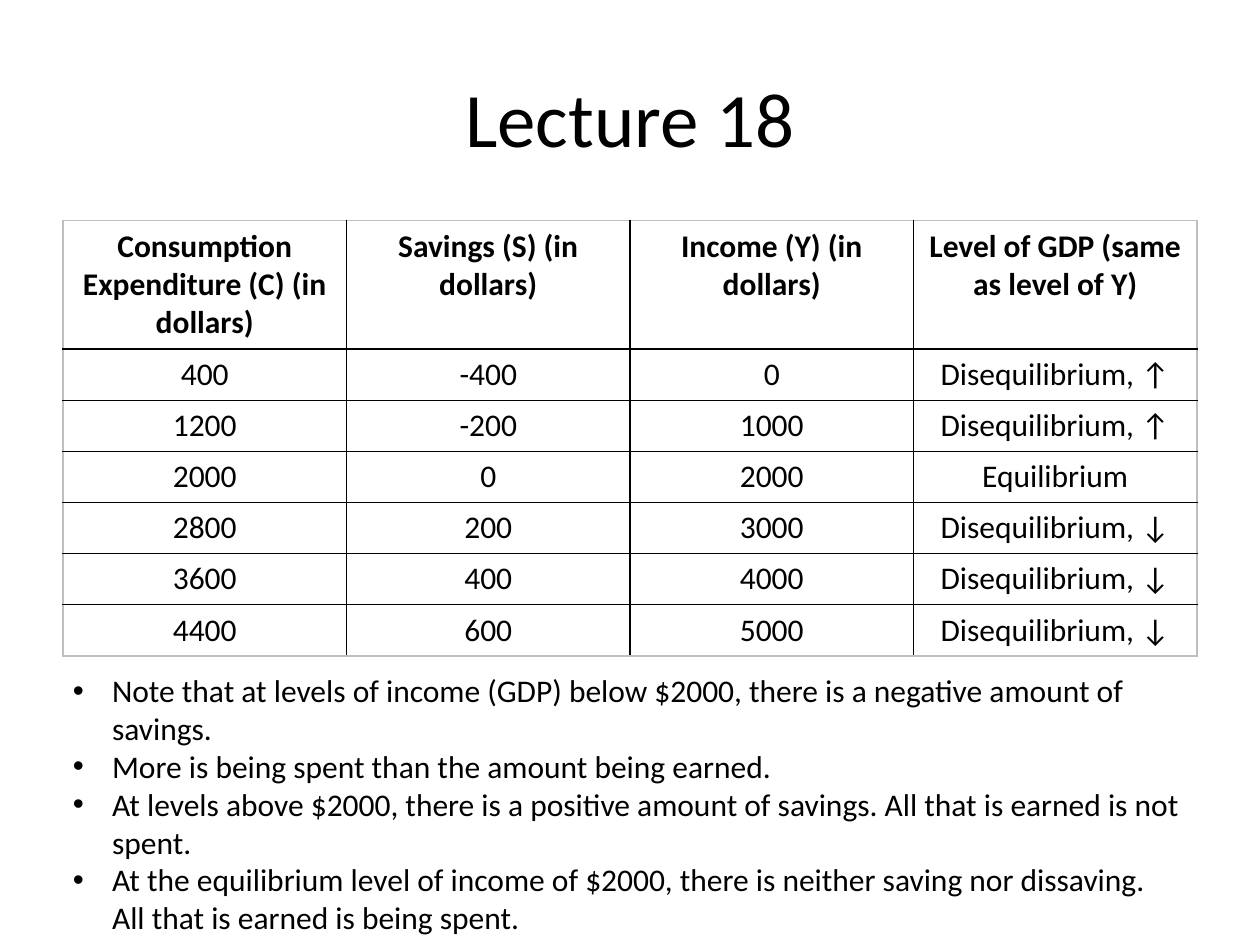
from pptx import Presentation
from pptx.dml.color import RGBColor as Rgb
from pptx.enum.text import MSO_ANCHOR as Anchor, MSO_AUTO_SIZE as Auto, PP_ALIGN as Align
from pptx.oxml.ns import qn
from pptx.util import Cm, Pt
from lxml.etree import SubElement as Sub

INK = "000000"
EDGE = "BFBFBF"
HEADS = [
    "Consumption Expenditure (C) (in dollars)",
    "Savings (S) (in dollars)",
    "Income (Y) (in dollars)",
    "Level of GDP (same as level of Y)",
]
ROWS = [
    ("400", "-400", "0", "Disequilibrium, ↑"),
    ("1200", "-200", "1000", "Disequilibrium, ↑"),
    ("2000", "0", "2000", "Equilibrium"),
    ("2800", "200", "3000", "Disequilibrium, ↓"),
    ("3600", "400", "4000", "Disequilibrium, ↓"),
    ("4400", "600", "5000", "Disequilibrium, ↓"),
]
NOTES = [
    "Note that at levels of income (GDP) below $2000, there is a negative amount of savings.",
    "More is being spent than the amount being earned.",
    "At levels above $2000, there is a positive amount of savings. All that is earned is not spent.",
    "At the equilibrium level of income of $2000, there is neither saving nor dissaving. "
    "All that is earned is being spent.",
]


def tint(code):
    return Rgb.from_string(code)


class Deck:
    def __init__(self, font, size):
        self.font, self.size = font, size
        self.file = Presentation()
        self.file.slide_width, self.file.slide_height = Cm(25.4), Cm(19.05)
        self.slide = self.file.slides.add_slide(self.file.slide_layouts[6])

    def add_text(self, para, text, size=None, bold=False):
        run = para.add_run()
        run.text = text
        run.font.name = self.font
        run.font.size = Pt(size or self.size)
        run.font.bold = bold
        run.font.color.rgb = tint(INK)

    def box(self, left, top, width, height):
        shape = self.slide.shapes.add_textbox(Cm(left), Cm(top), Cm(width), Cm(height))
        shape.text_frame.word_wrap = True
        return shape.text_frame

    def title(self, text, *place):
        frame = self.box(*place)
        frame.vertical_anchor = Anchor.MIDDLE
        para = frame.paragraphs[0]
        para.alignment = Align.CENTER
        self.add_text(para, text, 44)

    def bullets(self, items, *place):
        frame = self.box(*place)
        frame.auto_size = Auto.SHAPE_TO_FIT_TEXT
        for i, item in enumerate(items):
            para = frame.add_paragraph() if i else frame.paragraphs[0]
            props = para._p.get_or_add_pPr()
            props.set("marL", str(Cm(0.79)))
            props.set("indent", str(-Cm(0.79)))
            Sub(props, qn("a:buFont"), typeface="Arial")
            Sub(props, qn("a:buChar"), char="•")
            self.add_text(para, item)

    def rule(self, cell, side, code):
        line = Sub(cell._tc.get_or_add_tcPr(), qn(f"a:ln{side}"), w=str(Pt(1)))
        fill = Sub(line, qn("a:solidFill"))
        Sub(fill, qn("a:srgbClr"), val=code)

    def table(self, heads, rows, left, top, width, head, step):
        data = [heads, *rows]
        tall, wide = len(data), len(heads)
        high = head + step * len(rows)
        grid = self.slide.shapes.add_table(
            tall, wide, Cm(left), Cm(top), Cm(width), Cm(high)).table
        grid.horz_banding = False
        for r, row in enumerate(data):
            grid.rows[r].height = Cm(step if r else head)
            for c, text in enumerate(row):
                cell = grid.cell(r, c)
                outer = {"L": c == 0, "R": c == wide - 1, "T": r == 0, "B": r == tall - 1}
                for side, rim in outer.items():
                    self.rule(cell, side, EDGE if rim else INK)
                cell.fill.background()
                para = cell.text_frame.paragraphs[0]
                para.alignment = Align.CENTER
                self.add_text(para, text, bold=r == 0)


def main():
    deck = Deck("Calibri", 18)
    deck.title("Lecture 18", 1.27, 0.76, 22.86, 3.18)
    deck.table(HEADS, ROWS, 1.27, 4.45, 22.86, 2.59, 1.03)
    deck.bullets(NOTES, 1.22, 13.41, 22.91, 5.64)
    deck.file.save("out.pptx")


if __name__ == "__main__":
    main()
